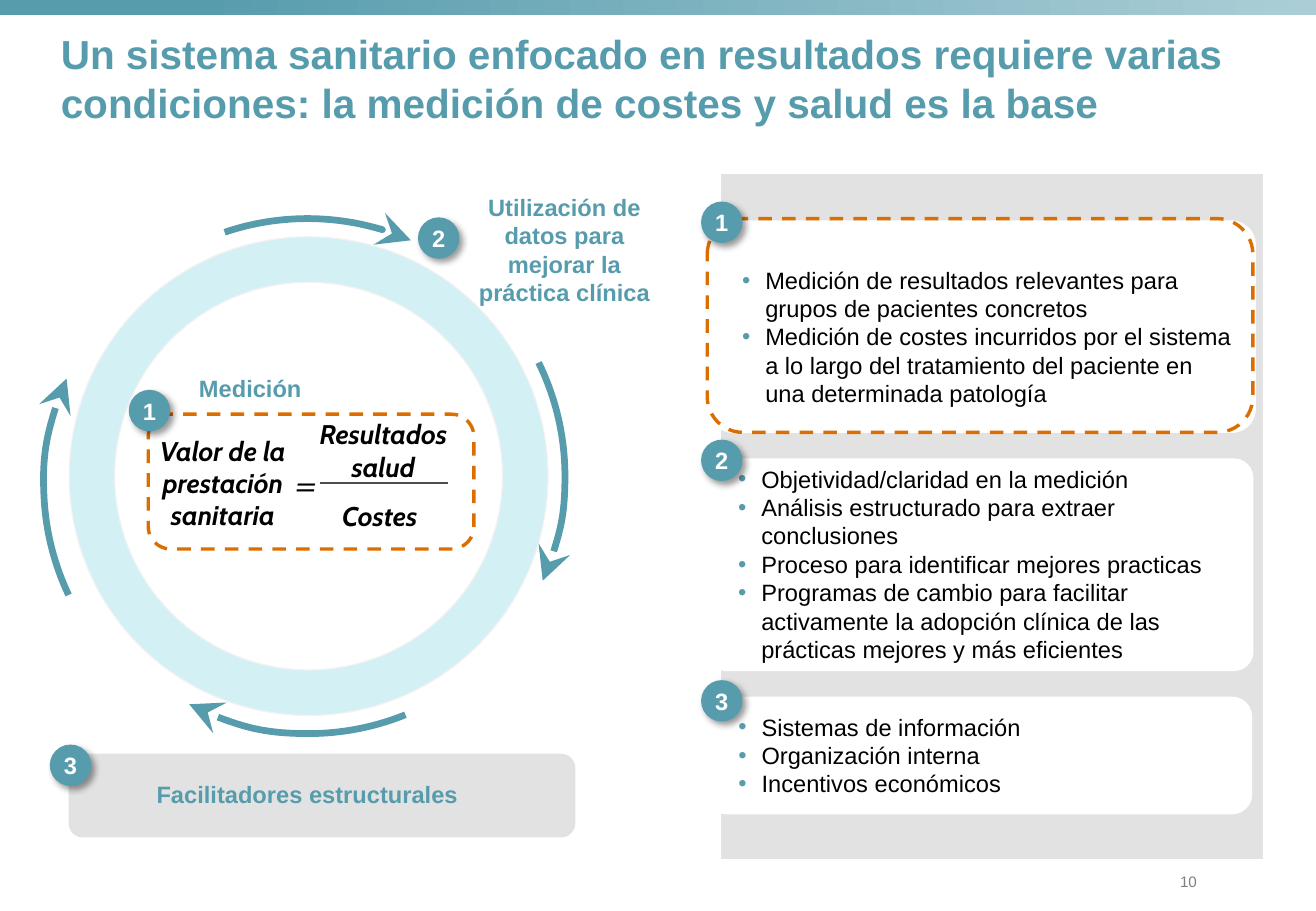
from lxml import etree
from pptx import Presentation
from pptx.dml.color import RGBColor
from pptx.enum.dml import MSO_LINE
from pptx.enum.shapes import MSO_CONNECTOR, MSO_SHAPE
from pptx.enum.text import MSO_ANCHOR, MSO_AUTO_SIZE, PP_ALIGN
from pptx.oxml import parse_xml
from pptx.oxml.ns import nsdecls, qn
from pptx.util import Inches, Pt

RECT, ROUND, OVAL = MSO_SHAPE.RECTANGLE, MSO_SHAPE.ROUNDED_RECTANGLE, MSO_SHAPE.OVAL
DONUT, ARC, FRAME = MSO_SHAPE.DONUT, MSO_SHAPE.ARC, MSO_SHAPE.FLOWCHART_ALTERNATE_PROCESS
LEFT, CENTER, RIGHT = PP_ALIGN.LEFT, PP_ALIGN.CENTER, PP_ALIGN.RIGHT
TOP, MIDDLE, BOTTOM = MSO_ANCHOR.TOP, MSO_ANCHOR.MIDDLE, MSO_ANCHOR.BOTTOM
TEAL, GREY, WHITE, BLACK, ORANGE = "579CAD", "E2E2E2", "FFFFFF", "000000", "DC6E00"
rgb = RGBColor.from_string

prs = Presentation()
prs.slide_width, prs.slide_height = Inches(10.83), Inches(7.5)
s = prs.slides.add_slide(prs.slide_layouts[5])


def add_sp(kind, box, fill=None, line=None, width=0.75, adj=()):
    sp = s.shapes.add_shape(kind, *map(Inches, box))
    sp.shadow.inherit = False
    for i, value in enumerate(adj):
        sp.adjustments[i] = value
    if fill:
        sp.fill.solid()
        sp.fill.fore_color.rgb = rgb(fill)
    else:
        sp.fill.background()
    if line:
        sp.line.color.rgb = rgb(line)
        sp.line.width = Pt(width)
    else:
        sp.line.fill.background()
    return sp


def write(tf, lines, fmt, color, ins=(0, 0, 0, 0), anchor=MIDDLE, align=CENTER, wrap=True, bullets=False):
    tf.word_wrap, tf.vertical_anchor, tf.auto_size = wrap, anchor, MSO_AUTO_SIZE.NONE
    for side, value in zip(("left", "top", "right", "bottom"), ins):
        setattr(tf, f"margin_{side}", Inches(value))
    for i, line in enumerate(lines):
        p = tf.paragraphs[0] if i == 0 else tf.add_paragraph()
        p.alignment = align
        if bullets:
            pPr = p._p.get_or_add_pPr()
            pPr.set("marL", str(Inches(0.32)))
            pPr.set("indent", str(Inches(-0.19)))
            clr = etree.SubElement(pPr, qn("a:buClr"))
            etree.SubElement(clr, qn("a:srgbClr")).set("val", TEAL)
            etree.SubElement(pPr, qn("a:buFont")).set("typeface", "Arial")
            etree.SubElement(pPr, qn("a:buChar")).set("char", "•")
        r = p.add_run()
        r.text = line
        for name, value in fmt.items():
            setattr(r.font, name, value)
        r.font.color.rgb = rgb(color)


body = {"name": "Arial", "size": Pt(14)}
label = {**body, "bold": True}
formula = {"name": "Cabin", "size": Pt(16), "bold": True, "italic": True}
equals = {"name": "Cambria", "size": Pt(24), "italic": True}

bar = add_sp(RECT, (0, 0, 10.83, 0.12))
bar.fill.gradient()
bar.fill.gradient_angle = 0
for stop, (position, color) in zip(bar.fill.gradient_stops, ((0.15, TEAL), (1, "ABCED6"))):
    stop.position = position
    stop.color.rgb = rgb(color)

title = s.shapes.title
title.left, title.top, title.width, title.height = map(Inches, (0.5, 0.18, 9.83, 0.91))
write(title.text_frame,
      ["Un sistema sanitario enfocado en resultados requiere varias condiciones: "
       "la medición de costes y salud es la base"],
      {**label, "size": Pt(24)}, TEAL, (0, 0.05, 0, 0.05), BOTTOM, LEFT)

add_sp(RECT, (5.94, 1.44, 4.45, 5.63), GREY, GREY)
panels = [
    ((5.84, 1.82, 4.49, 1.74), 0.113, 0.31, [
        "Medición de resultados relevantes para grupos de pacientes concretos",
        "Medición de costes incurridos por el sistema a lo largo del tratamiento "
        "del paciente en una determinada patología"]),
    ((5.82, 3.78, 4.49, 1.74), 0.089, 0, [
        "Objetividad/claridad en la medición",
        "Análisis estructurado para extraer conclusiones",
        "Proceso para identificar mejores practicas",
        "Programas de cambio para facilitar activamente la adopción clínica de las "
        "prácticas mejores y más eficientes"]),
    ((5.82, 5.74, 4.48, 0.96), 0.167, 0.08, [
        "Sistemas de información", "Organización interna", "Incentivos económicos"]),
]
for box, radius, top, items in panels:
    sp = add_sp(ROUND, box, WHITE, WHITE, adj=[radius])
    write(sp.text_frame, items, body, BLACK, (0.08, top, 0.08, 0.08), TOP, LEFT, bullets=True)

add_sp(ROUND, (0.57, 6.21, 4.16, 0.68), GREY, GREY)
add_sp(DONUT, (0.57, 1.95, 3.94, 3.94), "D3F0F5", "F2F2F2", adj=[0.095])

for box in ((1.22, 3.41, 2.68, 1.11), (5.82, 1.8, 4.49, 1.76)):
    add_sp(FRAME, box, line=ORANGE, width=2).line.dash_style = MSO_LINE.DASH

arcs = [(0.41, 1.8, 345.4, (159.51, 184.98)), (0.42, 1.8, 0, (40.76, 70.57)),
        (0.41, 1.8, 0, (200.31, 14.39)), (0.36, 1.87, 86.7, (40.76, 70.57))]
for left, top, rotation, angles in arcs:
    sp = add_sp(ARC, (left, top, 4.24, 4.24), line=TEAL, width=4, adj=angles)
    sp.rotation = rotation
    tail = etree.SubElement(sp.line._get_or_add_ln(), qn("a:tailEnd"))
    for name, value in (("type", "stealth"), ("w", "lg"), ("len", "lg")):
        tail.set(name, value)

texts = [
    ((1.56, 6.26, 1.94, 0.55), ["Facilitadores estructurales"], label, TEAL, False),
    ((1.09, 2.92, 1.94, 0.55), ["Medición"], label, TEAL, False),
    ((3.94, 1.78, 1.41, 0.55), ["Utilización de datos para mejorar la práctica clínica"], label, TEAL, True),
    ((1.33, 3.7, 1.01, 0.55), ["Valor de la", "prestación", "sanitaria"], formula, BLACK, False),
    ((2.33, 3.68, 0.37, 0.6), ["="], equals, BLACK, False),
    ((2.65, 3.43, 1.01, 0.55), ["Resultados", "salud"], formula, BLACK, False),
    ((2.62, 3.97, 1.01, 0.55), ["Costes"], formula, BLACK, False),
]
for box, lines, fmt, color, wrap in texts:
    tb = s.shapes.add_textbox(*map(Inches, box))
    write(tb.text_frame, lines, fmt, color, wrap=wrap)

fraction = s.shapes.add_connector(MSO_CONNECTOR.STRAIGHT, *map(Inches, (2.63, 3.98, 3.69, 3.98)))
fraction.line.color.rgb = rgb("4D4D4D")
fraction.line.width = Pt(1.25)
etree.SubElement(fraction._element.spPr, qn("a:effectLst"))

badges = [("1", 1.07, 3.22), ("2", 3.45, 1.8), ("3", 0.42, 6.14),
          ("1", 5.78, 1.67), ("2", 5.78, 3.63), ("3", 5.78, 5.61)]
for number, left, top in badges:
    sp = add_sp(OVAL, (left, top, 0.32, 0.32), TEAL, TEAL, 1.5)
    write(sp.text_frame, [number], label, WHITE)
    sp._element.spPr.find(qn("a:effectLst")).append(parse_xml(
        f'<a:outerShdw {nsdecls("a")} blurRad="{Pt(4)}" dist="{Pt(3)}" dir="2700000" algn="tl" rotWithShape="0">'
        '<a:srgbClr val="000000"><a:alpha val="40000"/></a:srgbClr></a:outerShdw>'))

page = s.shapes.add_textbox(*map(Inches, (9.64, 7.18, 0.21, 0.14)))
write(page.text_frame, ["10"], {**body, "size": Pt(9)}, "808080", anchor=TOP, align=RIGHT, wrap=False)

prs.save("out.pptx")
